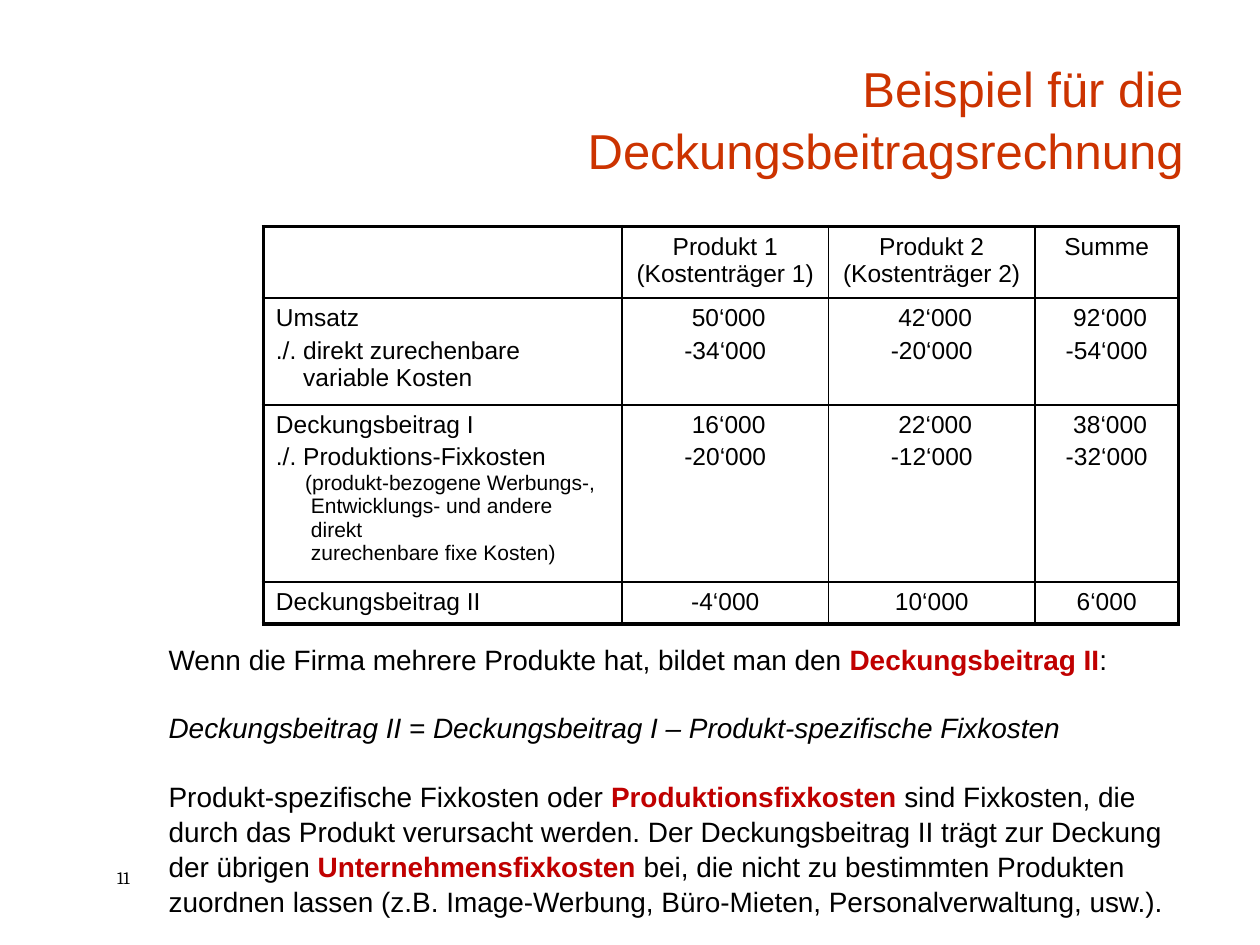
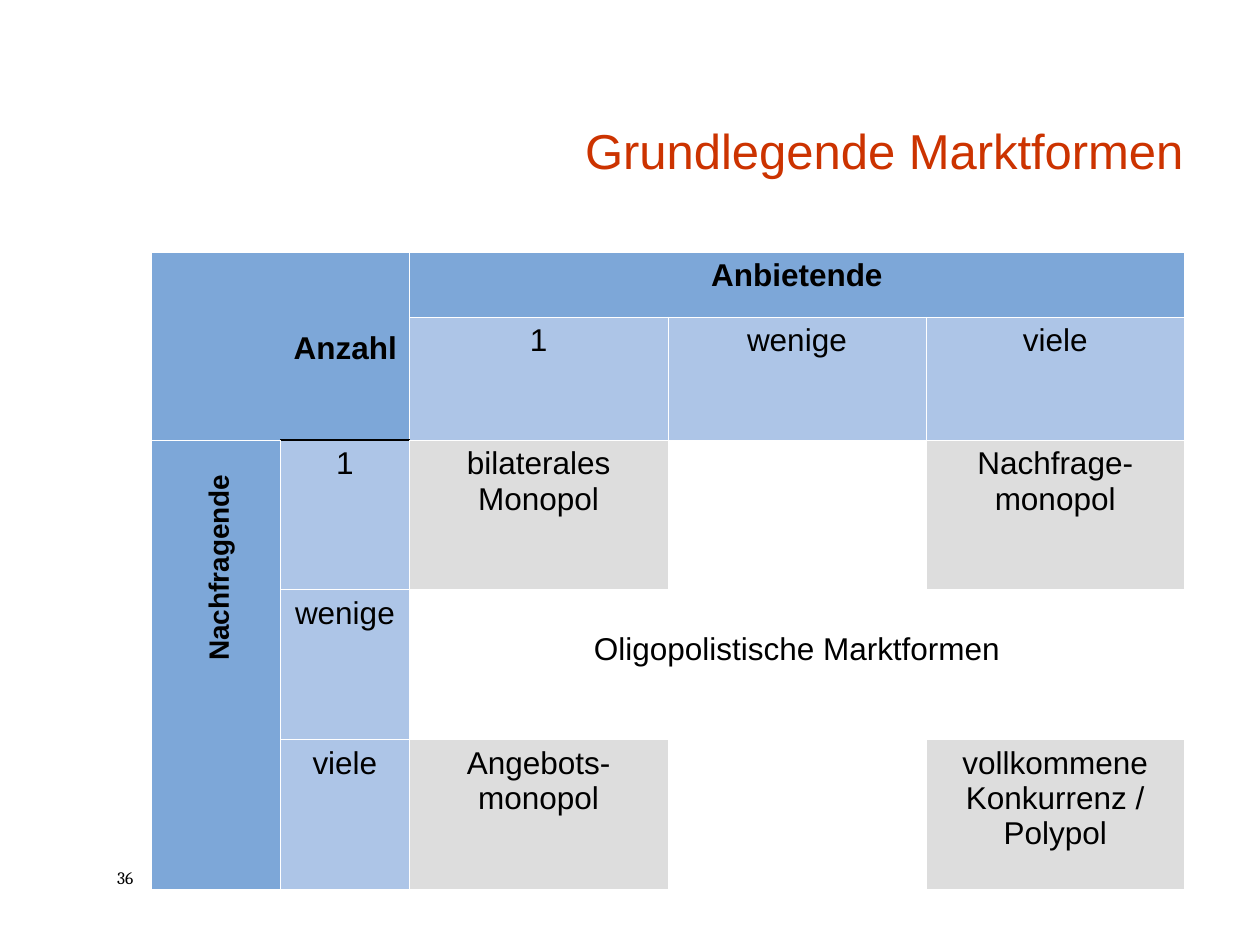
from dataclasses import dataclass
from lxml.etree import SubElement as Sub
from pptx import Presentation as Deck
from pptx.dml.color import RGBColor as Rgb
from pptx.enum.text import MSO_ANCHOR as Anchor, PP_ALIGN as Align
from pptx.oxml.ns import qn
from pptx.util import Pt


@dataclass(frozen=True)
class Theme:
    ink: str = "000000"
    white: str = "FFFFFF"
    title: str = "CC3300"
    key: str = "C00000"
    head: str = "7DA7D8"
    side: str = "ADC5E7"
    grey: str = "DDDDDD"
    sans: str = "Arial"
    serif: str = "Cambria"
    big: int = 28
    large: int = 18
    body: int = 16
    mid: int = 14
    small: int = 12
    tiny: int = 10
    thick: float = 2.25
    thin: float = 1
    hair: float = 0.06


THEME = Theme()


def put(item, **vals):
    """Set each attribute of item from a name and a value."""
    for name, val in vals.items():
        setattr(item, name, val)


def par(runs, indent=0, font=None, **form):
    """One paragraph: plain text or (text, font) runs."""
    if isinstance(runs, str):
        runs = [(runs, {})]
    return runs, indent, font or {}, form


class Page:
    def __init__(self, deck, theme):
        self.deck, self.theme, self.slide = deck, theme, None

    # Slide with the shared title and page number
    def start(self, title, number):
        t = self.theme
        self.slide = self.deck.slides.add_slide(self.deck.slide_layouts[6])
        self.text((59.8, 491.8, 48, 19.4), [par(number)],
                  dict(size=t.tiny, name=t.serif))
        self.text((150.5, 30.2, 532.8, 75.6),
                  [par(title, alignment=Align.RIGHT, line_spacing=1.04)],
                  dict(size=t.big, color=t.title), Anchor.BOTTOM)

    # Fonts start from one base; a run may change any part of it
    def style(self, font, vals):
        base = dict(name=self.theme.sans, color=self.theme.ink, bold=False)
        vals = {**base, **vals}
        vals["size"] = Pt(vals["size"])
        font.color.rgb = Rgb.from_string(vals.pop("color"))
        put(font, **vals)

    def fill(self, frame, pars, font):
        for i, (runs, indent, extra, form) in enumerate(pars):
            p = frame.paragraphs[0] if i == 0 else frame.add_paragraph()
            put(p, **form)
            if indent:
                p._p.get_or_add_pPr().set("marL", str(Pt(indent)))
            for words, change in runs:
                run = p.add_run()
                run.text = words
                self.style(run.font, {**font, **extra, **change})

    def text(self, box, pars, font, anchor=Anchor.TOP, turn=0):
        shape = self.slide.shapes.add_textbox(*map(Pt, box))
        shape.rotation = turn
        put(shape.text_frame, word_wrap=True, vertical_anchor=anchor)
        self.fill(shape.text_frame, pars, font)

    # Table frame with fixed columns and rows
    def table(self, left, top, cols, rows):
        box = map(Pt, (left, top, sum(cols), sum(rows)))
        grid = self.slide.shapes.add_table(len(rows), len(cols), *box).table
        put(grid, first_row=False, horz_banding=False)
        for col, width in zip(grid.columns, cols):
            col.width = Pt(width)
        for row, height in zip(grid.rows, rows):
            row.height = Pt(height)
        return grid

    # One cell: edges come before the fill
    def cell(self, cell, pars, font, edges, color=None, drop=0):
        props = cell._tc.get_or_add_tcPr()
        for side in "LRTB":
            tone, width = edges[side]
            line = Sub(props, qn(f"a:ln{side}"), w=str(Pt(width)))
            Sub(Sub(line, qn("a:solidFill")), qn("a:srgbClr"), val=tone)
        if color:
            cell.fill.solid()
            cell.fill.fore_color.rgb = Rgb.from_string(color)
        else:
            cell.fill.background()
        cell.margin_top = Pt(3.6 + drop)
        self.fill(cell.text_frame, pars, font)
        if not pars:
            cell.text_frame.paragraphs[0].font.size = Pt(font["size"])


# Slide 1: contribution margin
def margin(page):
    t = page.theme
    page.start("Beispiel für die Deckungsbeitragsrechnung", "11")

    def label(*lines):
        return [par(s, space_before=Pt(2.8 if i else 0))
                for i, s in enumerate(lines)]

    def head(*lines):
        return [par(s, alignment=Align.CENTER) for s in lines]

    def sums(*lines):
        return [par(s, alignment=Align.CENTER, space_before=Pt(2.8 if i else 0))
                for i, s in enumerate(lines)]

    note = [par(s, indent, dict(size=t.small)) for s, indent in (
        ("(produkt-bezogene Werbungs-,", 16.7),
        ("Entwicklungs- und andere direkt", 20),
        ("zurechenbare fixe Kosten)", 20))]
    data = [
        [[], head("Produkt 1", "(Kostenträger 1)"),
         head("Produkt 2", "(Kostenträger 2)"), head("Summe")],
        [label("Umsatz", "./. direkt zurechenbare") + [par("variable Kosten", 15.6)],
         sums(" 50‘000", "-34‘000"), sums(" 42‘000", "-20‘000"),
         sums(" 92‘000", "-54‘000")],
        [label("Deckungsbeitrag I", "./. Produktions-Fixkosten") + note,
         sums(" 16‘000", "-20‘000"), sums(" 22‘000", "-12‘000"),
         sums(" 38‘000", "-32‘000")],
        [label("Deckungsbeitrag II"), sums("-4‘000"), sums("10‘000"),
         sums("6‘000")],
    ]
    grid = page.table(150.5, 129.4, (205, 118, 118, 82), (41, 61, 87, 24))
    for r, row in enumerate(data):
        for c, pars in enumerate(row):
            rim = dict(L=c == 0, R=c == 3, T=r == 0, B=r == 3)
            edges = {s: (t.ink, t.thick if out else t.thin)
                     for s, out in rim.items()}
            page.cell(grid.cell(r, c), pars, dict(size=t.mid), edges)

    # Text below the table
    key = dict(color=t.key, bold=True)
    lines = [
        [("Wenn die Firma mehrere Produkte hat, bildet man den ", {}),
         ("Deckungsbeitrag II", key), (":", {})],
        [("Deckungsbeitrag II = Deckungsbeitrag I – "
          "Produkt-spezifische Fixkosten", dict(italic=True))],
        [("Produkt-spezifische Fixkosten oder ", {}),
         ("Produktionsfixkosten", key),
         (" sind Fixkosten, die durch das Produkt verursacht werden. Der "
          "Deckungsbeitrag II trägt zur Deckung der übrigen ", {}),
         ("Unternehmensfixkosten", key),
         (" bei, die nicht zu bestimmten Produkten zuordnen lassen (z.B. "
          "Image-Werbung, Büro-Mieten, Personalverwaltung, usw.).", {})],
    ]
    pars = [par(runs, line_spacing=1.04, space_before=Pt(19.1 if i else 0))
            for i, runs in enumerate(lines)]
    page.text((89.3, 362.9, 592.6, 162.7), pars, dict(size=t.body))


# Slide 2: market forms
def market(page):
    t = page.theme
    page.start("Grundlegende Marktformen", "36")
    count = ("1", "wenige", "viele")
    forms = {
        (2, 2): ("bilaterales", "Monopol"),
        (2, 4): ("Nachfrage-", "monopol"),
        (3, 2): ("Oligopolistische Marktformen",),
        (4, 2): ("Angebots-", "monopol"),
        (4, 4): ("vollkommene", "Konkurrenz / Polypol"),
    }
    words = {(0, 0): ("Anzahl",), (0, 2): ("Anbietende",), **forms}
    for i, name in enumerate(count, 2):
        words[1, i] = words[i, 1] = (name,)
    drops = {(0, 0): 41.4, (3, 2): 20.7}
    rule = (t.ink, t.thin)
    marks = {(1, 1): dict(B=rule), (2, 1): dict(T=rule)}

    def tone(r, c):
        if r == 0 or c == 0 or (r, c) == (1, 1):
            return t.head
        if r == 1 or c == 1:
            return t.side
        return t.white if 3 in (r, c) else t.grey

    grid = page.table(86.4, 144, [73.8] * 2 + [147.6] * 3,
                      [37.2, 67.5] + [85.5] * 3)
    for r in range(5):
        for c in range(5):
            spot = (r, c)
            side = Align.RIGHT if spot == (0, 0) else Align.CENTER
            pars = [par(s, alignment=side) for s in words.get(spot, ())]
            edges = {**dict.fromkeys("LRTB", (t.white, t.hair)),
                     **marks.get(spot, {})}
            page.cell(grid.cell(r, c), pars, dict(size=t.large, bold=r == 0),
                      edges, tone(r, c), drops.get(spot, 0))
    for first, last in (((0, 0), (1, 1)), ((0, 2), (0, 4)),
                        ((2, 0), (4, 0)), ((3, 2), (3, 4))):
        grid.cell(*first).merge(grid.cell(*last))

    # Upright label of the left column
    page.text((49, 311.8, 149.8, 25.2),
              [par("Nachfragende", alignment=Align.CENTER)],
              dict(size=t.body, bold=True), turn=270)


def main():
    deck = Deck()
    put(deck, slide_width=Pt(720), slide_height=Pt(540))
    page = Page(deck, THEME)
    margin(page)
    market(page)
    deck.save("out.pptx")


if __name__ == "__main__":
    main()
